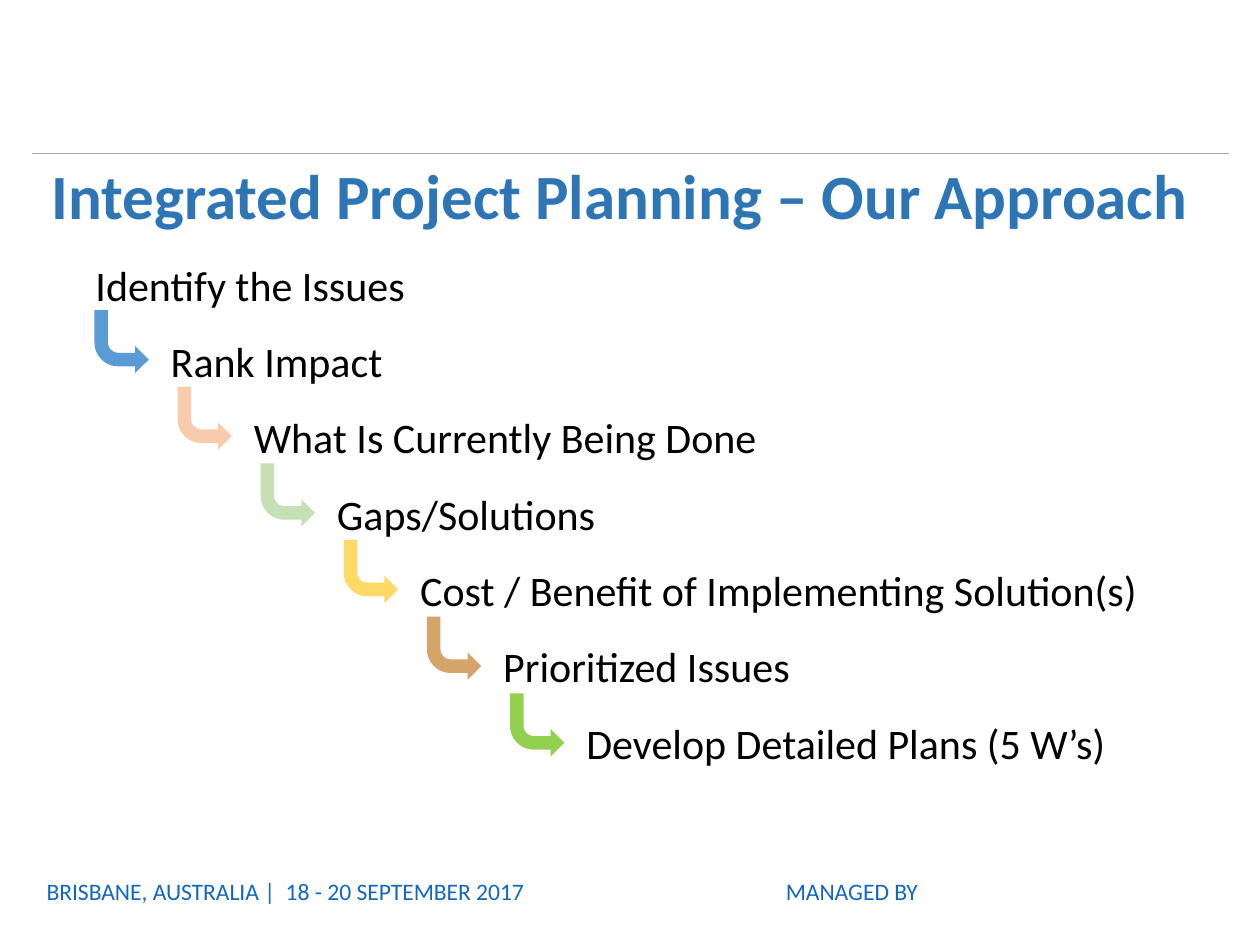
from lxml import etree
from pptx import Presentation
from pptx.dml.color import RGBColor
from pptx.enum.shapes import MSO_CONNECTOR, MSO_SHAPE
from pptx.enum.text import MSO_ANCHOR
from pptx.oxml.ns import qn
from pptx.util import Pt

STRAIGHT = MSO_CONNECTOR.STRAIGHT
BENT_ARROW = MSO_SHAPE.BENT_ARROW
TOP, MIDDLE = MSO_ANCHOR.TOP, MSO_ANCHOR.MIDDLE

BLACK = RGBColor(0x00, 0x00, 0x00)
TITLE_BLUE = RGBColor(0x2E, 0x75, 0xB6)
FOOTER_BLUE = RGBColor(0x12, 0x68, 0xBD)
RULE_GRAY = RGBColor(0xA6, 0xA6, 0xA6)
BLUE = RGBColor(0x5B, 0x9B, 0xD5)
PEACH = RGBColor(0xF8, 0xCB, 0xAD)
PALE_GREEN = RGBColor(0xC5, 0xE0, 0xB4)
YELLOW = RGBColor(0xFF, 0xD9, 0x66)
TAN = RGBColor(0xD4, 0xA4, 0x6B)
GREEN = RGBColor(0x92, 0xD0, 0x50)

# Each step: label, box width, colour of the arrow leading to the next step
STEPS = [
    ("Identify the Issues", 197, BLUE),
    ("Rank Impact", 144, PEACH),
    ("What Is Currently Being Done", 302, PALE_GREEN),
    ("Gaps/Solutions", 166, YELLOW),
    ("Cost / Benefit of Implementing Solution(s)", 425, TAN),
    ("Prioritized Issues", 180, GREEN),
    ("Develop Detailed Plans (5 W’s)", 317, None),
]
STEP_X = 47.5
LABEL_Y, ARROW_Y = 43.6, 43.8


class SlideBuilder:
    font_name = "Calibri"

    def __init__(self, slide):
        self.slide = slide

    def text(self, words, left, top, width, height, size, color,
             bold=False, anchor=TOP, spacing=None):
        box = self.slide.shapes.add_textbox(Pt(left), Pt(top), Pt(width), Pt(height))
        frame = box.text_frame
        frame.word_wrap = False
        frame.vertical_anchor = anchor
        paragraph = frame.paragraphs[0]
        paragraph.text = words
        paragraph.line_spacing = spacing
        font = paragraph.font
        font.name, font.size, font.bold = self.font_name, Pt(size), bold
        font.color.rgb = color

    def rule(self, left, right, y, color):
        line = self.slide.shapes.add_connector(STRAIGHT, Pt(left), Pt(y), Pt(right), Pt(y))
        line.line.color.rgb = color
        line.line.width = Pt(0.75)
        etree.SubElement(line._element.spPr, qn("a:effectLst"))

    def down_right_arrow(self, left, top, color):
        arrow = self.slide.shapes.add_shape(BENT_ARROW, Pt(left), Pt(top), Pt(31), Pt(36))
        arrow.rotation = 180
        arrow._element.spPr.xfrm.set("flipH", "1")
        arrow.shadow.inherit = False
        arrow.fill.solid()
        arrow.fill.fore_color.rgb = color
        arrow.line.fill.background()


def main():
    deck = Presentation()
    deck.slide_width, deck.slide_height = Pt(720), Pt(540)
    builder = SlideBuilder(deck.slides.add_slide(deck.slide_layouts[6]))

    # Footer and header rule
    builder.text("BRISBANE, AUSTRALIA |  18 - 20 SEPTEMBER 2017",
                 19.5, 497.5, 322.5, 23.5, 13.5, FOOTER_BLUE)
    builder.rule(18, 702, 87.8, RULE_GRAY)
    builder.text("MANAGED BY", 442, 497.5, 101.5, 23.5, 13.5, FOOTER_BLUE)

    # Staircase of steps; the first label sits above its arrow
    for i, (label, width, arrow_color) in enumerate(STEPS):
        left = 43 + i * STEP_X if i else 47.5
        builder.text(label, left, 144.7 + i * LABEL_Y, width, 36, 24, BLACK)
        if arrow_color:
            builder.down_right_arrow(54 + i * STEP_X, 177.2 + i * ARROW_Y, arrow_color)

    # Title
    builder.text("Integrated Project Planning – Our Approach", 22.3, 88.5, 669.5, 50.5,
                 36, TITLE_BLUE, bold=True, anchor=MIDDLE, spacing=0.9)

    deck.save("out.pptx")


if __name__ == "__main__":
    main()
